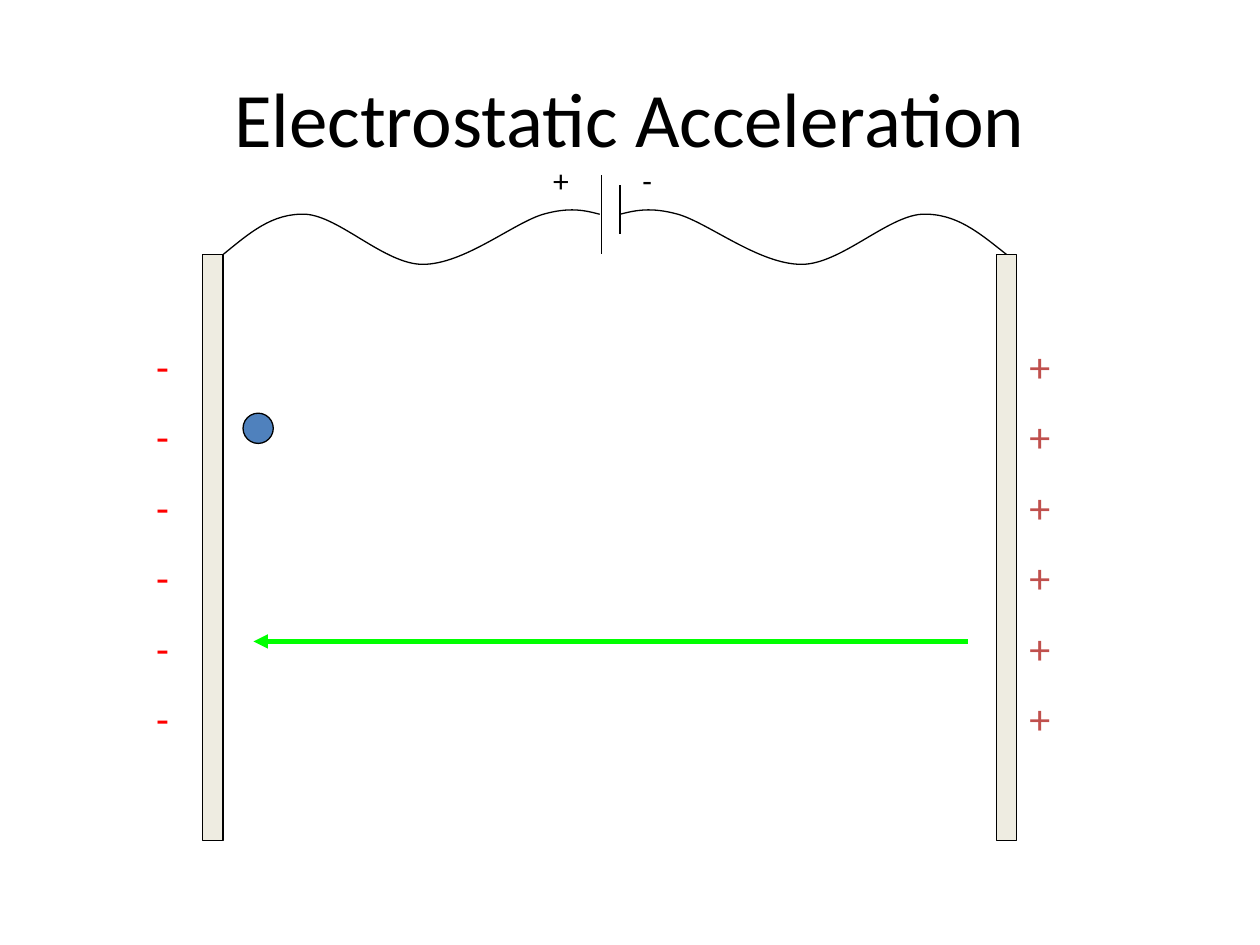
from lxml import etree
from pptx import Presentation
from pptx.dml.color import RGBColor
from pptx.enum.shapes import MSO_CONNECTOR, MSO_SHAPE
from pptx.enum.text import MSO_ANCHOR, PP_ALIGN
from pptx.oxml.ns import qn
from pptx.util import Cm, Pt

STRAIGHT = MSO_CONNECTOR.STRAIGHT
RECTANGLE, OVAL = MSO_SHAPE.RECTANGLE, MSO_SHAPE.OVAL
MIDDLE, TOP = MSO_ANCHOR.MIDDLE, MSO_ANCHOR.TOP
CENTER, LEFT = PP_ALIGN.CENTER, PP_ALIGN.LEFT

THEME = {
    "font": "Calibri",
    "title": 44, "charge": 24, "pole": 18,
    "thin": 0.75, "thick": 2.75, "charge_gap": 11.5,
    "ink": "000000", "plate": "EEECE1", "particle": "4F81BD",
    "field": "00FF00", "positive": "C0504D", "negative": "FF0000",
}

# Content; every length is in centimetres.
TITLE = "Electrostatic Acceleration"
TITLE_BOX = (1.27, 0.76, 22.86, 3.18)
PLATE_TOP, PLATE_WIDTH, PLATE_HEIGHT = 5.13, 0.41, 11.81
PLATE_LEFTS = (4.09, 20.09)
PARTICLE = (4.9, 8.33, 0.61, 0.61)
LINES = [  # start, end
    ((4.5, PLATE_TOP), (4.5, 16.92)),
    ((20.29, PLATE_TOP), (20.29, 16.74)),
    ((12.12, 3.53), (12.12, PLATE_TOP)),
    ((12.5, 3.73), (12.5, 4.72)),
]
FIELD_ARROW = ((19.51, 12.93), (5.11, 12.93))
WIRES = [(4.5, 12.09), (20.29, 12.5)]  # x at plate, x at battery
# Bezier points of a wire: share of the way to the battery, height on the slide
WAVE = [
    (0, 5.13), (0.07, 4.7), (0.13, 4.29), (0.22, 4.32), (0.31, 4.37),
    (0.43, 5.33), (0.53, 5.33), (0.64, 5.33), (0.77, 4.5), (0.85, 4.32),
    (0.92, 4.17), (0.96, 4.24), (1, 4.32),
]
LABELS = [  # box, paragraphs, size, colour
    ((20.5, 6.73, 1.19, 8.86), ["+"] * 6, "charge", "positive"),
    ((2.9, 6.73, 1.19, 8.86), ["-"] * 6, "charge", "negative"),
    ((10.9, 3.12, 0.99, 1.02), ["+"], "pole", "ink"),
    ((12.7, 3.12, 1.8, 1.02), ["-"], "pole", "ink"),
]


def color(name):
    return RGBColor.from_string(THEME[name])


def cm(lengths):
    return [Cm(length) for length in lengths]


def write(frame, lines, size, ink="ink", align=LEFT, anchor=TOP, gap=0):
    frame.word_wrap = True
    frame.vertical_anchor = anchor
    for index, line in enumerate(lines):
        para = frame.add_paragraph() if index else frame.paragraphs[0]
        para.alignment = align
        if index:
            para.space_before = Pt(gap)
        span = para.add_run()
        span.text = line
        span.font.name = THEME["font"]
        span.font.size = Pt(THEME[size])
        span.font.color.rgb = color(ink)


def outline(item, ink="ink", width="thin"):
    item.line.color.rgb = color(ink)
    item.line.width = Pt(THEME[width])


def add_line(slide, start, end, ink="ink", width="thin", arrow=False):
    line = slide.shapes.add_connector(STRAIGHT, *cm(start + end))
    outline(line, ink, width)
    if arrow:
        etree.SubElement(line.line._get_or_add_ln(), qn("a:tailEnd"), type="triangle")
    etree.SubElement(line._element.spPr, qn("a:effectLst"))


def add_shape(slide, kind, box, fill):
    shape = slide.shapes.add_shape(kind, *cm(box))
    shape.shadow.inherit = False
    shape.fill.solid()
    shape.fill.fore_color.rgb = color(fill)
    outline(shape)


def add_wire(slide, plate_x, battery_x):
    """Draw the wave as a freeform, then turn each three segments into a curve."""
    points = [cm((plate_x + share * (battery_x - plate_x), y)) for share, y in WAVE]
    builder = slide.shapes.build_freeform(*points[0])
    builder.add_line_segments(points[1:], close=False)
    wire = builder.convert_to_shape()
    segments = list(wire._element.iter(qn("a:lnTo")))
    for first in range(0, len(segments), 3):
        curve = etree.Element(qn("a:cubicBezTo"))
        segments[first].addprevious(curve)
        for segment in segments[first:first + 3]:
            curve.append(segment[0])
            segment.getparent().remove(segment)
    wire.shadow.inherit = False
    wire.fill.background()
    outline(wire)


def main():
    deck = Presentation()
    deck.slide_width, deck.slide_height = cm((25.4, 19.05))
    slide = deck.slides.add_slide(deck.slide_layouts[5])

    title = slide.shapes.title
    title.left, title.top, title.width, title.height = cm(TITLE_BOX)
    write(title.text_frame, [TITLE], "title", align=CENTER, anchor=MIDDLE)

    for start, end in LINES:
        add_line(slide, start, end)
    add_line(slide, *FIELD_ARROW, ink="field", width="thick", arrow=True)
    add_shape(slide, OVAL, PARTICLE, "particle")
    for wire in WIRES:
        add_wire(slide, *wire)
    for box, lines, size, ink in LABELS:
        label = slide.shapes.add_textbox(*cm(box))
        write(label.text_frame, lines, size, ink, gap=THEME["charge_gap"])
    for left in PLATE_LEFTS:
        add_shape(slide, RECTANGLE, (left, PLATE_TOP, PLATE_WIDTH, PLATE_HEIGHT), "plate")

    deck.save("out.pptx")


if __name__ == "__main__":
    main()
